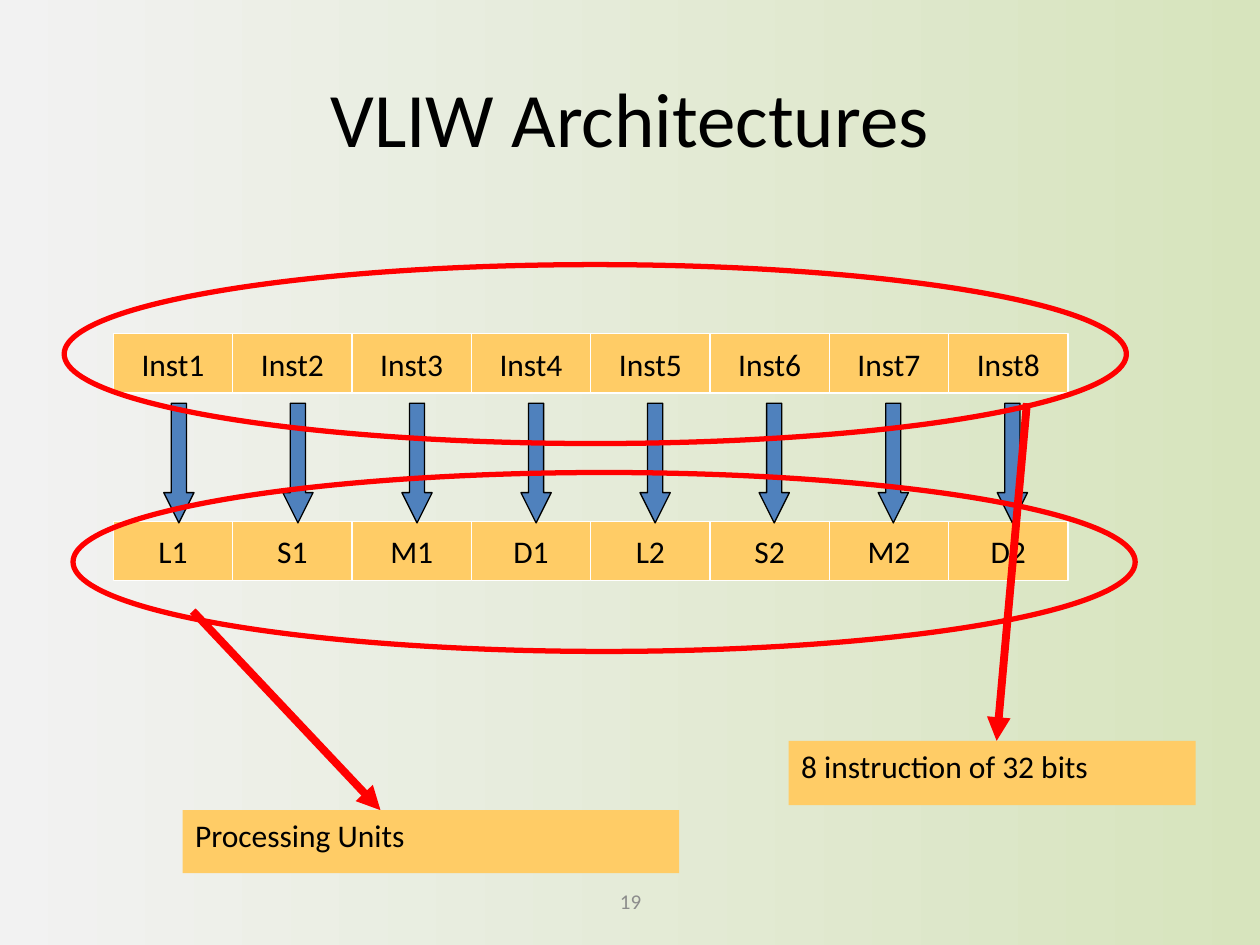
from lxml import etree
from pptx import Presentation
from pptx.dml.color import RGBColor
from pptx.enum import shapes, text
from pptx.oxml.ns import qn
from pptx.util import Inches, Pt

TITLE = "VLIW Architectures"
PAGE_NUMBER = "19"
ROWS = [
    (2.65, ["Inst1", "Inst2", "Inst3", "Inst4", "Inst5", "Inst6", "Inst7", "Inst8"]),
    (4.14, ["L1", "S1", "M1", "D1", "L2", "S2", "M2", "D2"]),
]
CALLOUTS = [
    {"label": "Processing Units", "box": (1.45, 6.43, 3.94, 0.5),
     "ellipse": (0.58, 3.75, 8.43, 1.42), "pointer": (1.53, 4.85, 3.02, 6.43)},
    {"label": "8 instruction of 32 bits", "box": (6.26, 5.88, 3.23, 0.51),
     "ellipse": (0.51, 2.1, 8.43, 1.42), "pointer": (8.15, 3.2, 7.91, 5.88)},
]
GRID_LEFT, CELL_WIDTH, CELL_HEIGHT = 0.9, 0.947, 0.47
ARROW_LEFT, ARROW_STEP = 1.3, 0.945
ORANGE, BLUE, RED, GREY = "FFCC66", "4F81BD", "FF0000", "8C8C8C"
BLACK, WHITE = "000000", "FFFFFF"


def paint(color, value):
    color.rgb = RGBColor.from_string(value)


def write(shape, words, size, color=BLACK, align=text.PP_ALIGN.CENTER,
          anchor=text.MSO_ANCHOR.MIDDLE, wrap=True):
    frame = shape.text_frame
    frame.text = words
    frame.word_wrap = wrap
    frame.vertical_anchor = anchor
    para = frame.paragraphs[0]
    para.alignment = align
    font = para.runs[0].font
    font.name, font.size = "Calibri", Pt(size)
    paint(font.color, color)


def add_figure(page, kind, place, fill=None, line=None, width=0.75):
    figure = page.shapes.add_shape(kind, *map(Inches, place))
    figure.shadow.inherit = False
    if fill:
        figure.fill.solid()
        paint(figure.fill.fore_color, fill)
    else:
        figure.fill.background()
    if line:
        paint(figure.line.color, line)
        figure.line.width = Pt(width)
    else:
        figure.line.fill.background()
    return figure


def add_pointer(page, ends):
    pointer = page.shapes.add_connector(shapes.MSO_CONNECTOR.STRAIGHT, *map(Inches, ends))
    paint(pointer.line.color, RED)
    pointer.line.width = Pt(4.5)
    etree.SubElement(pointer.line._get_or_add_ln(), qn("a:tailEnd"), type="triangle")
    etree.SubElement(pointer._element.spPr, qn("a:effectLst"))


def main():
    deck = Presentation()
    deck.slide_width, deck.slide_height = Inches(10), Inches(7.5)
    page = deck.slides.add_slide(deck.slide_layouts[5])

    backdrop = page.background.fill
    backdrop.gradient()
    backdrop.gradient_angle = 0
    for stop, color, position in zip(backdrop.gradient_stops, ("F2F2F2", "D7E4BD"), (0, 1)):
        paint(stop.color, color)
        stop.position = position

    title = page.shapes.title
    title.left, title.top, title.width, title.height = map(Inches, (0.5, 0.3, 9, 1.25))
    write(title, TITLE, 44)
    number = page.shapes.add_textbox(*map(Inches, (3.42, 6.95, 3.17, 0.4)))
    write(number, PAGE_NUMBER, 12, GREY)

    kind = shapes.MSO_SHAPE
    for top, labels in ROWS:
        for column, label in enumerate(labels):
            place = (GRID_LEFT + column * CELL_WIDTH, top, CELL_WIDTH, CELL_HEIGHT)
            cell = add_figure(page, kind.RECTANGLE, place, ORANGE, WHITE)
            write(cell, label, 18, wrap=False)

    for column in range(len(ROWS[0][1])):
        place = (ARROW_LEFT + column * ARROW_STEP, 3.2, 0.24, 0.95)
        arrow = add_figure(page, kind.DOWN_ARROW, place, BLUE, BLACK)
        arrow.adjustments[0], arrow.adjustments[1] = 0.5, 1

    for callout in CALLOUTS:
        add_pointer(page, callout["pointer"])
        box = add_figure(page, kind.RECTANGLE, callout["box"], ORANGE)
        write(box, callout["label"], 18, align=text.PP_ALIGN.LEFT, anchor=text.MSO_ANCHOR.TOP)
        add_figure(page, kind.OVAL, callout["ellipse"], line=RED, width=3)

    deck.save("out.pptx")


if __name__ == "__main__":
    main()
